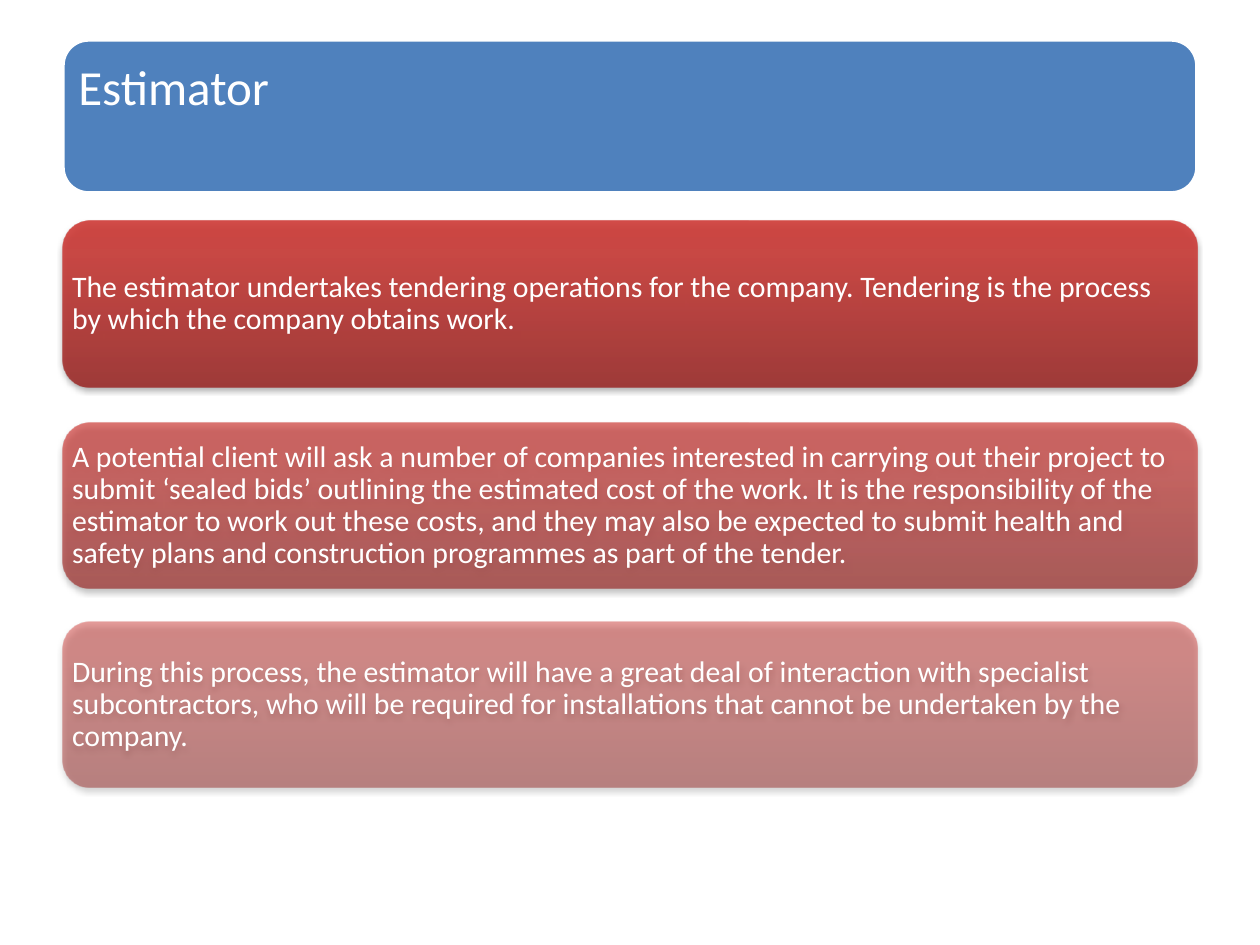
from lxml.etree import SubElement
from pptx import Presentation
from pptx.dml.color import RGBColor
from pptx.enum.shapes import MSO_SHAPE as Shape
from pptx.enum.text import MSO_ANCHOR as Anchor, PP_ALIGN as Align
from pptx.oxml.ns import qn
from pptx.util import Pt

EMU_PER_PX = 914400 / 126
COLORS = {"title": "4F81BD", "white": "FFFFFF", "black": "000000",
          "dark": "9C2F2D", "mid": "CB3E3A", "bright": "CE3B37"}
RED_STOPS = [(0, "dark"), (80, "mid"), (100, "bright")]
LEFT, WIDTH = 63, 1134
CARD_HEIGHT = 166
CARDS = [
    (221, 90, "The estimator undertakes tendering operations for the company. "
              "Tendering is the process by which the company obtains work."),
    (423, 70, "A potential client will ask a number of companies interested in carrying out "
              "their project to submit ‘sealed bids’ outlining the estimated cost of the work. "
              "It is the responsibility of the estimator to work out these costs, and they may "
              "also be expected to submit health and safety plans and construction programmes "
              "as part of the tender."),
    (622, 50, "During this process, the estimator will have a great deal of interaction with "
              "specialist subcontractors, who will be required for installations that cannot "
              "be undertaken by the company."),
]


def px(length):
    return round(length * EMU_PER_PX)


def rgb(name):
    return RGBColor.from_string(COLORS[name])


def add_color(parent, name, opacity):
    color = SubElement(parent, qn("a:srgbClr"), val=COLORS[name])
    SubElement(color, qn("a:alpha"), val=str(opacity * 1000))


class SlideBuilder:
    """Draws rounded text panels on one slide in a shared style."""

    def __init__(self, slide, font="Calibri"):
        self.slide = slide
        self.font = font

    def panel(self, text, top, height, size, anchor, side_inset, top_inset):
        shape = self.slide.shapes.add_shape(
            Shape.ROUNDED_RECTANGLE, px(LEFT), px(top), px(WIDTH), px(height))
        shape.shadow.inherit = False
        frame = shape.text_frame
        frame.word_wrap = True
        frame.vertical_anchor = anchor
        frame.margin_left = frame.margin_right = px(side_inset)
        frame.margin_top = frame.margin_bottom = px(top_inset)
        paragraph = frame.paragraphs[0]
        paragraph.text = text
        paragraph.alignment = Align.LEFT
        paragraph.line_spacing = 0.9
        paragraph.font.name = self.font
        paragraph.font.size = Pt(size)
        paragraph.font.color.rgb = rgb("white")
        return shape

    def title(self, text, top, height):
        shape = self.panel(text, top, height, 28, Anchor.TOP, 8, 16)
        shape.fill.solid()
        shape.fill.fore_color.rgb = rgb("title")
        shape.line.color.rgb = rgb("white")
        shape.line.width = Pt(2)

    def card(self, text, top, height, opacity):
        shape = self.panel(text, top, height, 17, Anchor.MIDDLE, 1, 1)
        shape.line.fill.background()
        self.gradient(shape, opacity)
        self.shadow(shape)

    def gradient(self, shape, opacity):
        shape.fill.gradient()
        shape.fill.gradient_angle = 90
        stops = shape.element.spPr.find(".//" + qn("a:gsLst"))
        stops.clear()
        for position, name in RED_STOPS:
            stop = SubElement(stops, qn("a:gs"), pos=str(position * 1000))
            add_color(stop, name, opacity)

    def shadow(self, shape):
        effects = shape.element.spPr.find(qn("a:effectLst"))
        outer = SubElement(effects, qn("a:outerShdw"), blurRad=str(Pt(3.1)),
                           dist=str(Pt(1.8)), dir="5400000", rotWithShape="0")
        add_color(outer, "black", 35)


def main():
    presentation = Presentation()
    presentation.slide_width, presentation.slide_height = px(1260), px(945)
    builder = SlideBuilder(presentation.slides.add_slide(presentation.slide_layouts[6]))
    builder.title("Estimator", 40, 153)
    for top, opacity, text in CARDS:
        builder.card(text, top, CARD_HEIGHT, opacity)
    presentation.save("out.pptx")


if __name__ == "__main__":
    main()
